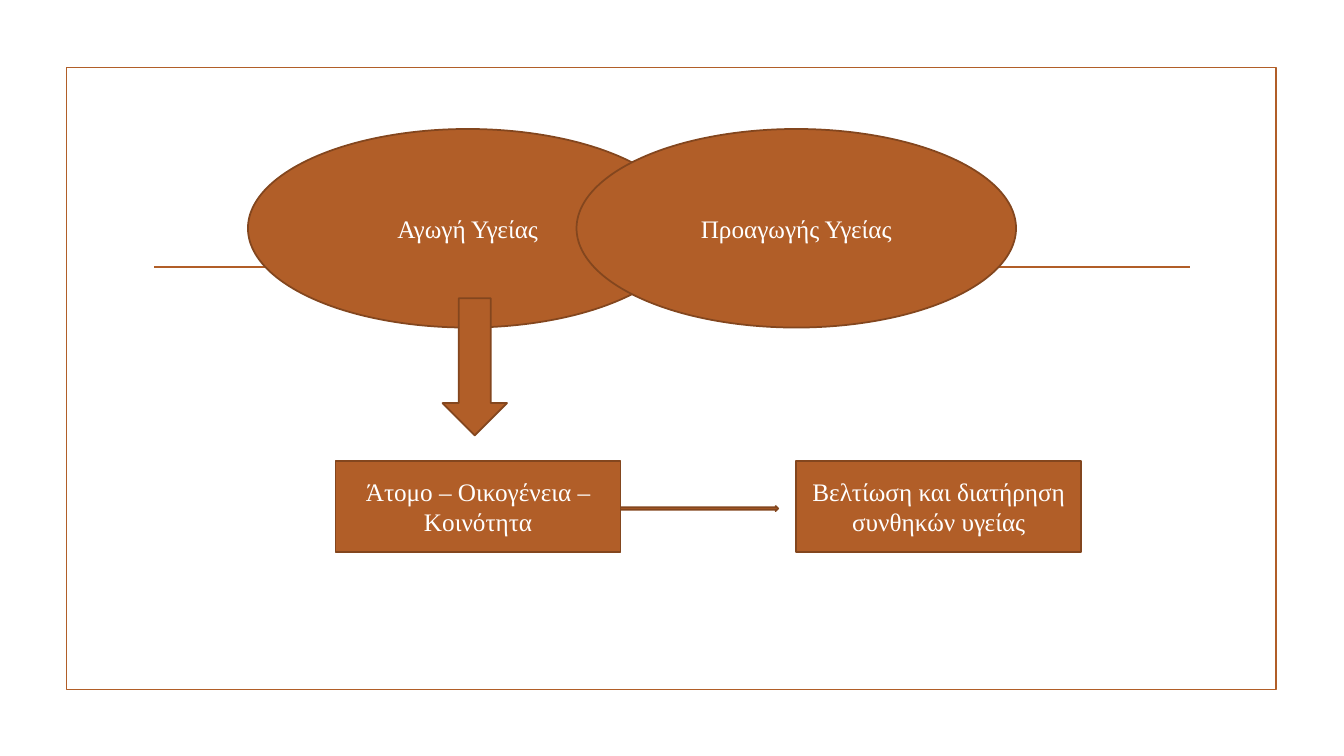
from pptx import Presentation
from pptx.dml.color import RGBColor
from pptx.enum.shapes import MSO_CONNECTOR as Connector, MSO_SHAPE as Preset
from pptx.enum.text import MSO_ANCHOR as Anchor, PP_ALIGN as Align
from pptx.oxml.ns import qn
from pptx.util import Inches, Pt
from lxml.etree import SubElement

RUST = RGBColor(0xB1, 0x5E, 0x28)
BROWN = RGBColor(0x83, 0x46, 0x1E)
WHITE = RGBColor(0xFF, 0xFF, 0xFF)
WIDTH, HEIGHT = Inches(13.33), Inches(7.5)
COLUMNS, ROWS = 40, 30


def write(frame, text, *, size=18, font="Times New Roman", color=WHITE, align=Align.CENTER):
    frame.word_wrap = True
    frame.vertical_anchor = Anchor.MIDDLE
    paragraph = frame.paragraphs[0]
    paragraph.alignment = align
    run = paragraph.add_run()
    run.text = text
    run.font.size = Pt(size)
    run.font.name = font
    run.font.color.rgb = color


class HealthDiagram:
    """Draws styled elements on a slide, measured in grid columns and rows."""

    def __init__(self, slide, line_width=1.25):
        self.shapes = slide.shapes
        self.line_width = Pt(line_width)

    def place(self, column, row):
        return round(column * WIDTH / COLUMNS), round(row * HEIGHT / ROWS)

    def outline(self, element, color):
        element.line.color.rgb = color
        element.line.width = self.line_width

    def frame(self, column, row, columns, rows):
        border = self.shapes.add_shape(
            Preset.RECTANGLE, *self.place(column, row), *self.place(columns, rows))
        border.shadow.inherit = False
        border.fill.background()
        self.outline(border, RUST)

    def rule(self, start, end, row):
        divider = self.shapes.add_connector(
            Connector.STRAIGHT, *self.place(start, row), *self.place(end, row))
        self.outline(divider, RUST)
        SubElement(divider._element.spPr, qn("a:effectLst"))

    def block(self, preset, column, row, columns, rows, text=None):
        block = self.shapes.add_shape(
            preset, *self.place(column, row), *self.place(columns, rows))
        block.shadow.inherit = False
        block.fill.solid()
        block.fill.fore_color.rgb = RUST
        self.outline(block, BROWN)
        if text:
            write(block.text_frame, text)


def main():
    deck = Presentation()
    deck.slide_width, deck.slide_height = WIDTH, HEIGHT
    diagram = HealthDiagram(deck.slides.add_slide(deck.slide_layouts[6]))

    diagram.frame(1.98, 2.68, 36, 24.68)
    diagram.rule(4.59, 35.43, 10.6)

    for column, concept in ((7.38, "Αγωγή Υγείας"), (17.16, "Προαγωγής Υγείας")):
        diagram.block(Preset.OVAL, column, 5.12, 13.08, 7.88, concept)
    diagram.block(Preset.DOWN_ARROW, 13.17, 11.84, 1.92, 5.44)

    diagram.block(Preset.RIGHT_ARROW, 18.45, 20.08, 4.71, 0.2)
    for column, outcome in ((9.99, "Άτομο – Οικογένεια – Κοινότητα"),
                            (23.7, "Βελτίωση και διατήρηση συνθηκών υγείας")):
        diagram.block(Preset.RECTANGLE, column, 18.28, 8.48, 3.64, outcome)

    deck.save("out.pptx")


if __name__ == "__main__":
    main()
